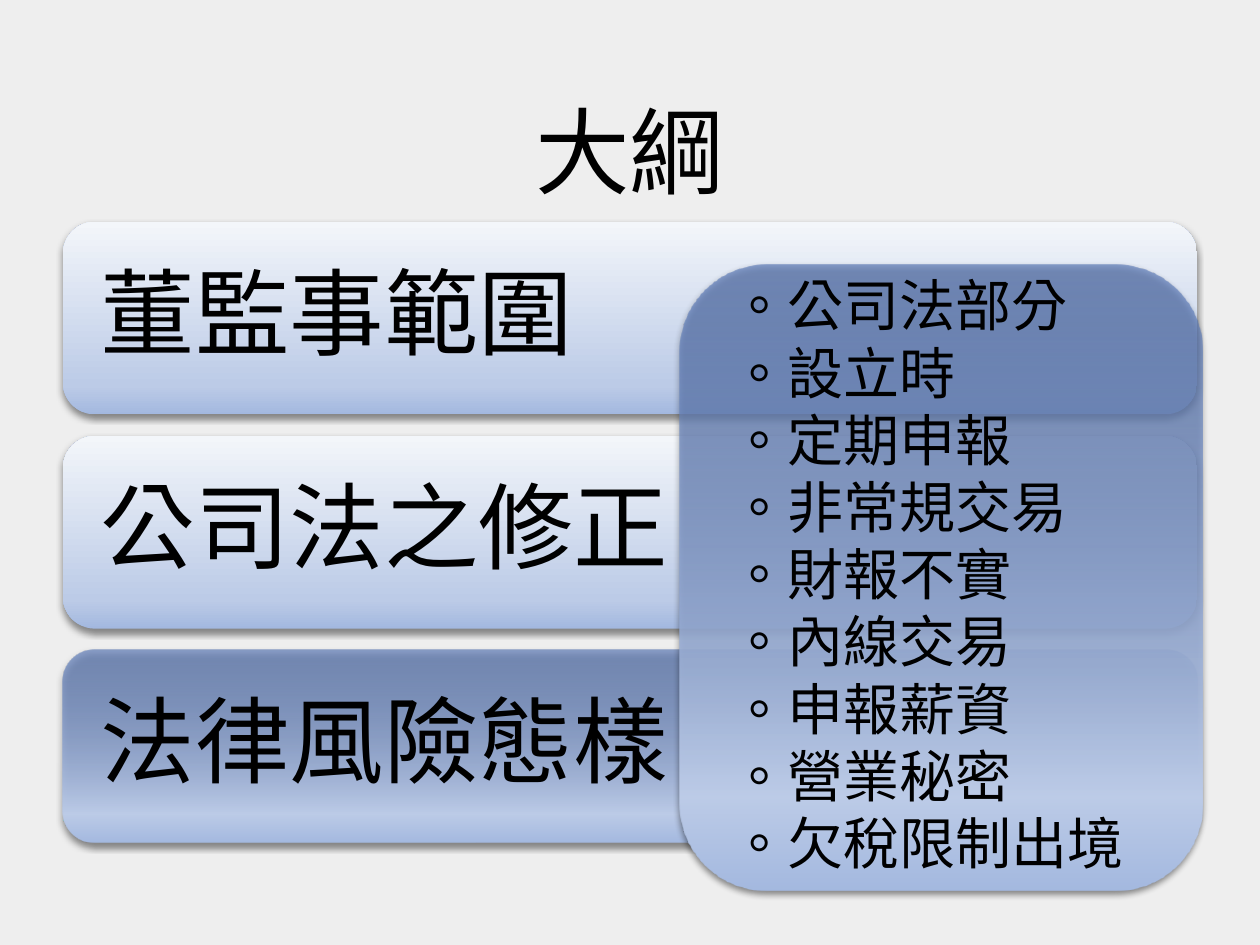
from lxml import etree
from pptx import Presentation
from pptx import util as u
from pptx.dml.color import RGBColor
from pptx.enum import shapes, text
from pptx.oxml import ns

FONT = "Noto Sans CJK SC"
BLACK = RGBColor(0x00, 0x00, 0x00)
BACKGROUND = RGBColor(0xEE, 0xEE, 0xEE)
BASE = RGBColor(0xA3, 0xB8, 0xDF)
MIDDLE = RGBColor(0xBC, 0xCB, 0xE7)
PALE = RGBColor(0xF3, 0xF6, 0xFA)
DEEP = RGBColor(0x48, 0x6A, 0xAF)


def add_card(left, top, width, height, top_color, opacity):
    """Rounded card with an upward gradient and a soft shadow."""
    card = slide.shapes.add_shape(
        shapes.MSO_SHAPE.ROUNDED_RECTANGLE,
        u.Inches(left), u.Inches(top), u.Inches(width), u.Inches(height))
    card.line.fill.background()
    card.fill.background()
    properties = card.fill._xPr
    plain_fill = properties.find(ns.qn("a:noFill"))
    gradient = etree.fromstring(
        f'<a:gradFill {ns.nsdecls("a")} rotWithShape="1"><a:gsLst>'
        f'<a:gs pos="0"><a:srgbClr val="{BASE}"/></a:gs>'
        f'<a:gs pos="15000"><a:srgbClr val="{MIDDLE}"/></a:gs>'
        f'<a:gs pos="100000"><a:srgbClr val="{top_color}">'
        f'<a:alpha val="{opacity * 1000}"/></a:srgbClr></a:gs>'
        '</a:gsLst><a:lin ang="16200000" scaled="0"/></a:gradFill>')
    properties.replace(plain_fill, gradient)
    card.shadow.inherit = False
    effects = properties.find(ns.qn("a:effectLst"))
    effects.append(etree.fromstring(
        f'<a:outerShdw {ns.nsdecls("a")} blurRad="{u.Pt(4)}" dist="{u.Pt(2)}" '
        f'dir="5400000" rotWithShape="0"><a:srgbClr val="{BLACK}">'
        '<a:alpha val="43000"/></a:srgbClr></a:outerShdw>'))


def add_text(left, top, width, height, lines, size, anchor):
    """Text box with one paragraph per line."""
    box = slide.shapes.add_textbox(
        u.Inches(left), u.Inches(top), u.Inches(width), u.Inches(height))
    frame = box.text_frame
    frame.word_wrap = True
    frame.vertical_anchor = anchor
    frame.text = "\n".join(lines)
    for paragraph in frame.paragraphs:
        for run in paragraph.runs:
            run.font.size = u.Pt(size)
            run.font.name = FONT
            run.font.color.rgb = BLACK
            # East Asian font and Traditional Chinese punctuation
            run_properties = run._r.get_or_add_rPr()
            run_properties.set("lang", "zh-TW")
            etree.SubElement(run_properties, ns.qn("a:ea"), typeface=FONT)
    return frame


presentation = Presentation()
presentation.slide_width = u.Inches(10)
presentation.slide_height = u.Inches(7.5)
slide = presentation.slides.add_slide(presentation.slide_layouts[6])
slide.background.fill.solid()
slide.background.fill.fore_color.rgb = BACKGROUND

# Main topics, the last one highlighted
topics = [("董監事範圍", PALE, 100), ("公司法之修正", PALE, 100),
          ("法律風險態樣", DEEP, 59)]
for index, (topic, top_color, opacity) in enumerate(topics):
    top = 1.76 + 1.7 * index
    add_card(0.5, top, 9, 1.53, top_color, opacity)
    topic_text = add_text(0.57, top + 0.07, 8.85, 1.38, [topic], 54,
                          text.MSO_ANCHOR.MIDDLE)
    topic_text.margin_left = topic_text.margin_right = u.Inches(0.23)
    topic_text.margin_top = topic_text.margin_bottom = u.Inches(0.23)
    topic_text.paragraphs[0].line_spacing = 0.9

# Title
title = add_text(0.5, 0.39, 9, 1.25, ["大綱"], 54, text.MSO_ANCHOR.BOTTOM)
title.margin_bottom = 0
title.paragraphs[0].alignment = text.PP_ALIGN.CENTER

# Panel of legal risks
add_card(5.39, 2.1, 4.15, 4.97, DEEP, 59)
risks = ["。公司法部分", "。設立時", "。定期申報", "。非常規交易", "。財報不實",
         "。內線交易", "。申報薪資", "。營業秘密", "。欠稅限制出境"]
risk_text = add_text(5.71, 2.1, 3.46, 4.95, risks, 32, text.MSO_ANCHOR.TOP)
for paragraph in risk_text.paragraphs:
    paragraph.line_spacing = u.Pt(38.4)

presentation.save("out.pptx")
